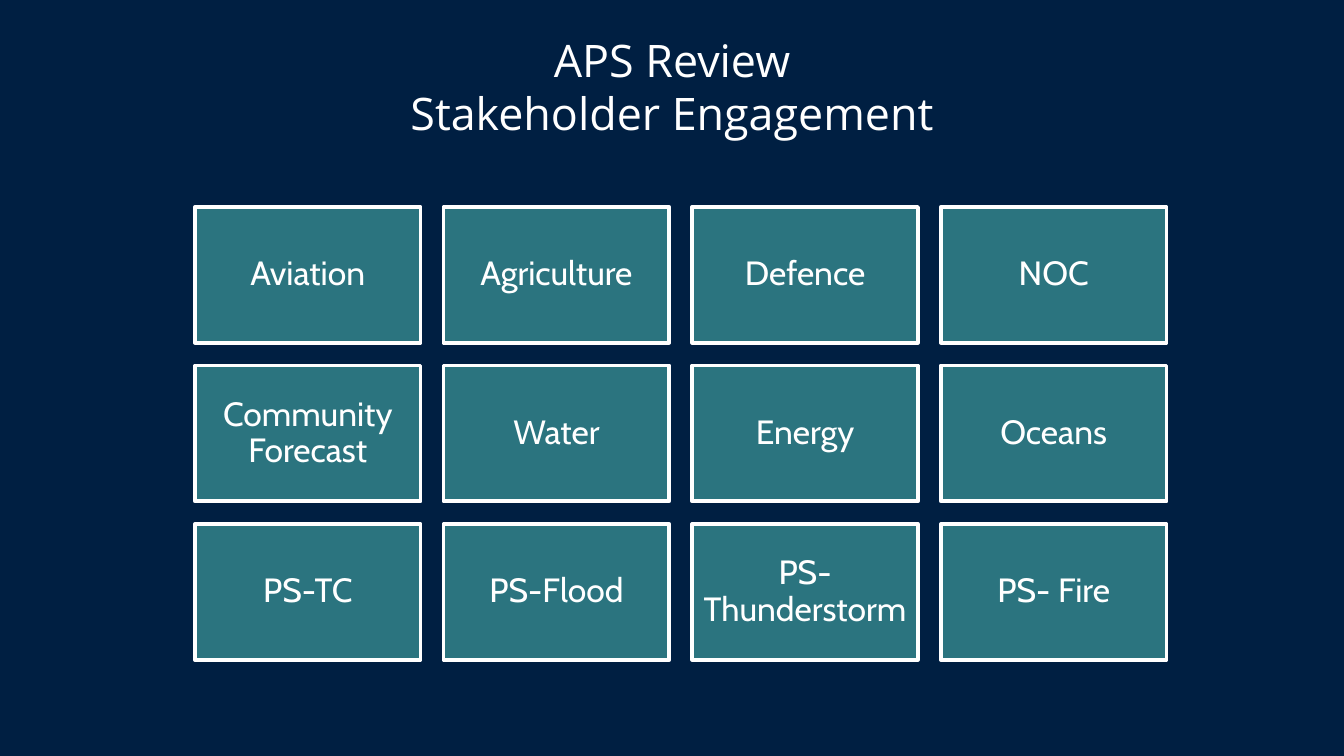
from pptx import Presentation
from pptx.dml.color import RGBColor
from pptx.enum.shapes import MSO_SHAPE as Shape
from pptx.enum.text import MSO_ANCHOR as Anchor, PP_ALIGN as Align
from pptx.util import Inches, Pt

# Content
TITLE_LINES = ["APS Review", "Stakeholder Engagement"]
STAKEHOLDERS = [
    ["Aviation", "Agriculture", "Defence", "NOC"],
    ["Community Forecast", "Water", "Energy", "Oceans"],
    ["PS-TC", "PS-Flood", "PS- Thunderstorm", "PS- Fire"],
]

THEME = {
    "background": RGBColor.from_string("001F42"),
    "tile": RGBColor.from_string("2B747F"),
    "light": RGBColor.from_string("FFFFFF"),
    "title_font": "Open Sans",
    "title_size": Pt(24),
    "tile_font": "Cabin",
    "tile_size": Pt(18),
}

# Slide and tile grid, in inches
SLIDE_WIDTH = 10
SLIDE_HEIGHT = SLIDE_WIDTH * 9 / 16
GRID_LEFT, GRID_TOP = 1.45, 1.54
TILE_WIDTH, TILE_HEIGHT = 1.68, 1.01
GAP = 0.17


def set_frame(frame, margin, anchor, line_spacing):
    frame.word_wrap = True
    frame.vertical_anchor = anchor
    frame.margin_left = frame.margin_right = Inches(margin)
    frame.margin_top = frame.margin_bottom = Inches(margin)
    paragraph = frame.paragraphs[0]
    paragraph.alignment = Align.CENTER
    paragraph.line_spacing = line_spacing
    return paragraph


def add_run(paragraph, text, role):
    run = paragraph.add_run()
    run.text = text
    run.font.name = THEME[f"{role}_font"]
    run.font.size = THEME[f"{role}_size"]
    run.font.color.rgb = THEME["light"]


def add_title(slide):
    title = slide.shapes.title
    title.left, title.top = Inches(0.39), Inches(0.24)
    title.width, title.height = Inches(9.22), Inches(0.69)
    paragraph = set_frame(title.text_frame, 0, Anchor.TOP, 1.0)
    for index, line in enumerate(TITLE_LINES):
        if index:
            paragraph.add_line_break()
        add_run(paragraph, line, "title")


def add_tile(slide, row, column, label):
    left = GRID_LEFT + column * (TILE_WIDTH + GAP)
    top = GRID_TOP + row * (TILE_HEIGHT + GAP)
    tile = slide.shapes.add_shape(
        Shape.RECTANGLE, Inches(left), Inches(top),
        Inches(TILE_WIDTH), Inches(TILE_HEIGHT))
    tile.shadow.inherit = False
    tile.fill.solid()
    tile.fill.fore_color.rgb = THEME["tile"]
    tile.line.color.rgb = THEME["light"]
    tile.line.width = Pt(2)
    paragraph = set_frame(tile.text_frame, 0.07, Anchor.MIDDLE, 0.9)
    add_run(paragraph, label, "tile")


def main():
    presentation = Presentation()
    presentation.slide_width = Inches(SLIDE_WIDTH)
    presentation.slide_height = Inches(SLIDE_HEIGHT)
    slide = presentation.slides.add_slide(presentation.slide_layouts[5])
    slide.background.fill.solid()
    slide.background.fill.fore_color.rgb = THEME["background"]

    add_title(slide)
    for row, labels in enumerate(STAKEHOLDERS):
        for column, label in enumerate(labels):
            add_tile(slide, row, column, label)

    presentation.save("out.pptx")


if __name__ == "__main__":
    main()
